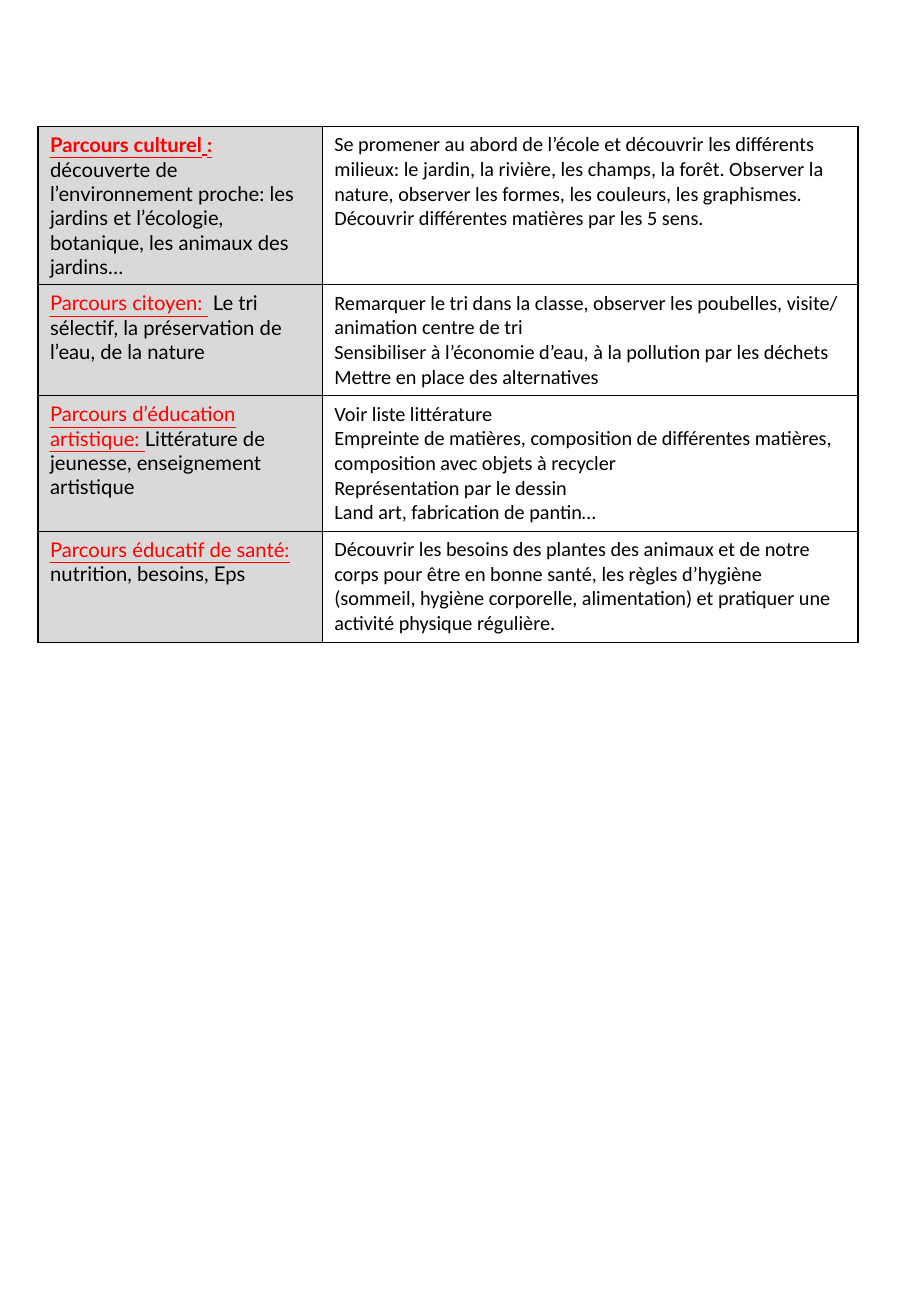
from lxml import etree
from pptx import Presentation
from pptx.dml.color import RGBColor
from pptx.oxml.ns import qn
from pptx.util import Pt

BLACK = RGBColor(0x00, 0x00, 0x00)
RED = RGBColor(0xFF, 0x00, 0x00)
GREY = RGBColor(0xD9, 0xD9, 0xD9)
WHITE = RGBColor(0xFF, 0xFF, 0xFF)
THEME_FONT, ACTIVITY_FONT, SPACE_FONT = "Lato", "Calibri", "Times New Roman"
TEXT_SIZE = 12
COLUMN_WIDTHS = (168.5, 317.5)

# Each row: height, title runs (text, font), bold title, theme, activities
ROWS = [
    (93.6,
     [("Parcours culturel", THEME_FONT), (" ", SPACE_FONT), (": ", THEME_FONT)], True,
     "découverte de l’environnement proche: les jardins et l’écologie, "
     "botanique, les animaux des jardins…",
     ["Se promener au abord de l’école et découvrir les différents milieux: "
      "le jardin, la rivière, les champs, la forêt. Observer la nature, "
      "observer les formes, les couleurs, les graphismes.",
      "Découvrir différentes matières par les 5 sens."]),
    (65.8,
     [("Parcours citoyen: ", THEME_FONT)], False,
     " Le tri sélectif, la préservation de l’eau, de la nature",
     ["Remarquer le tri dans la classe, observer les poubelles, visite/ "
      "animation centre de tri",
      "Sensibiliser à l’économie d’eau, à la pollution par les déchets",
      "Mettre en place des alternatives"]),
    (80.4,
     [("Parcours d’éducation artistique: ", THEME_FONT)], False,
     "Littérature de jeunesse, enseignement artistique",
     ["Voir liste littérature",
      "Empreinte de matières, composition de différentes matières, "
      "composition avec objets à recycler",
      "Représentation par le dessin",
      "Land art, fabrication de pantin…"]),
    (65.8,
     [("Parcours éducatif de santé: ", THEME_FONT)], False,
     "nutrition, besoins, Eps",
     ["Découvrir les besoins des plantes des animaux et de notre corps pour "
      "être en bonne santé, les règles d’hygiène (sommeil, hygiène corporelle, "
      "alimentation) et pratiquer une activité physique régulière."]),
]


def add_run(p, text, font, color=BLACK, bold=False, underline=False):
    r = p.add_run()
    r.text = text
    r.font.name = font
    r.font.size = Pt(TEXT_SIZE)
    r.font.color.rgb = color
    r.font.bold = bold
    r.font.underline = underline


def style_cell(cell, fill):
    # Borders come before the fill in the cell properties
    tc_pr = cell._tc.get_or_add_tcPr()
    for side in ("a:lnL", "a:lnR", "a:lnT", "a:lnB"):
        ln = etree.SubElement(tc_pr, qn(side), w=str(Pt(1)))
        line_fill = etree.SubElement(ln, qn("a:solidFill"))
        etree.SubElement(line_fill, qn("a:srgbClr"), val=str(BLACK))
    cell.fill.solid()
    cell.fill.fore_color.rgb = fill


def fill_theme(cell, title, bold, theme):
    style_cell(cell, GREY)
    p = cell.text_frame.paragraphs[0]
    for text, font in title:
        add_run(p, text, font, RED, bold, True)
    add_run(p, theme, THEME_FONT)


def fill_activities(cell, activities):
    style_cell(cell, WHITE)
    tf = cell.text_frame
    for i, activity in enumerate(activities):
        p = tf.add_paragraph() if i else tf.paragraphs[0]
        add_run(p, activity, ACTIVITY_FONT)


def add_pathways_table(slide, left, top):
    width, height = sum(COLUMN_WIDTHS), sum(row[0] for row in ROWS)
    table = slide.shapes.add_table(len(ROWS), len(COLUMN_WIDTHS), Pt(left), Pt(top),
                                   Pt(width), Pt(height)).table
    table.first_row = False
    table.horz_banding = False
    for column, column_width in zip(table.columns, COLUMN_WIDTHS):
        column.width = Pt(column_width)
    for i, (row_height, title, bold, theme, activities) in enumerate(ROWS):
        table.rows[i].height = Pt(row_height)
        fill_theme(table.cell(i, 0), title, bold, theme)
        fill_activities(table.cell(i, 1), activities)


def main():
    prs = Presentation()
    prs.slide_width, prs.slide_height = Pt(540), Pt(780)
    slide = prs.slides.add_slide(prs.slide_layouts[6])
    add_pathways_table(slide, 22.5, 75)
    prs.save("out.pptx")


if __name__ == "__main__":
    main()
